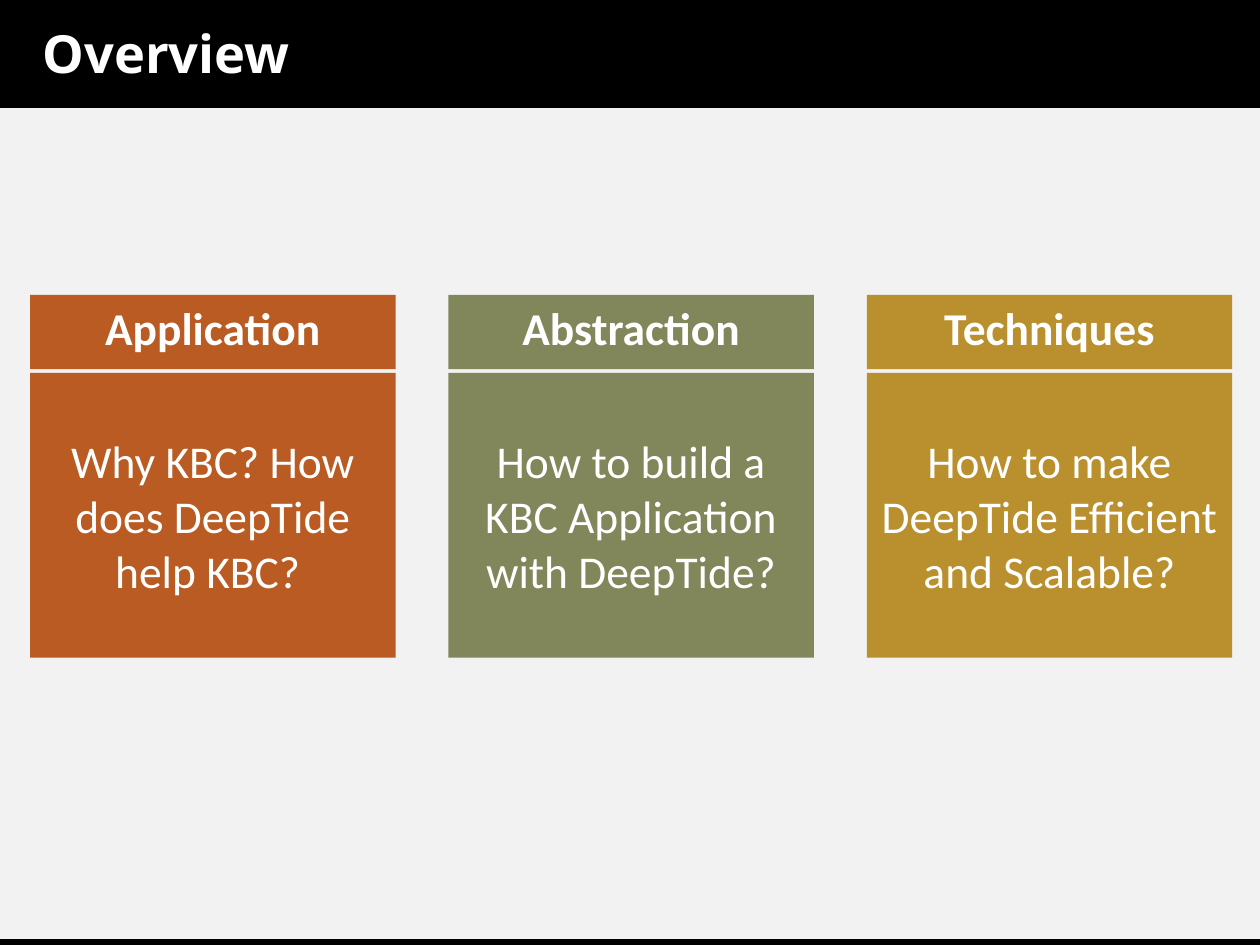
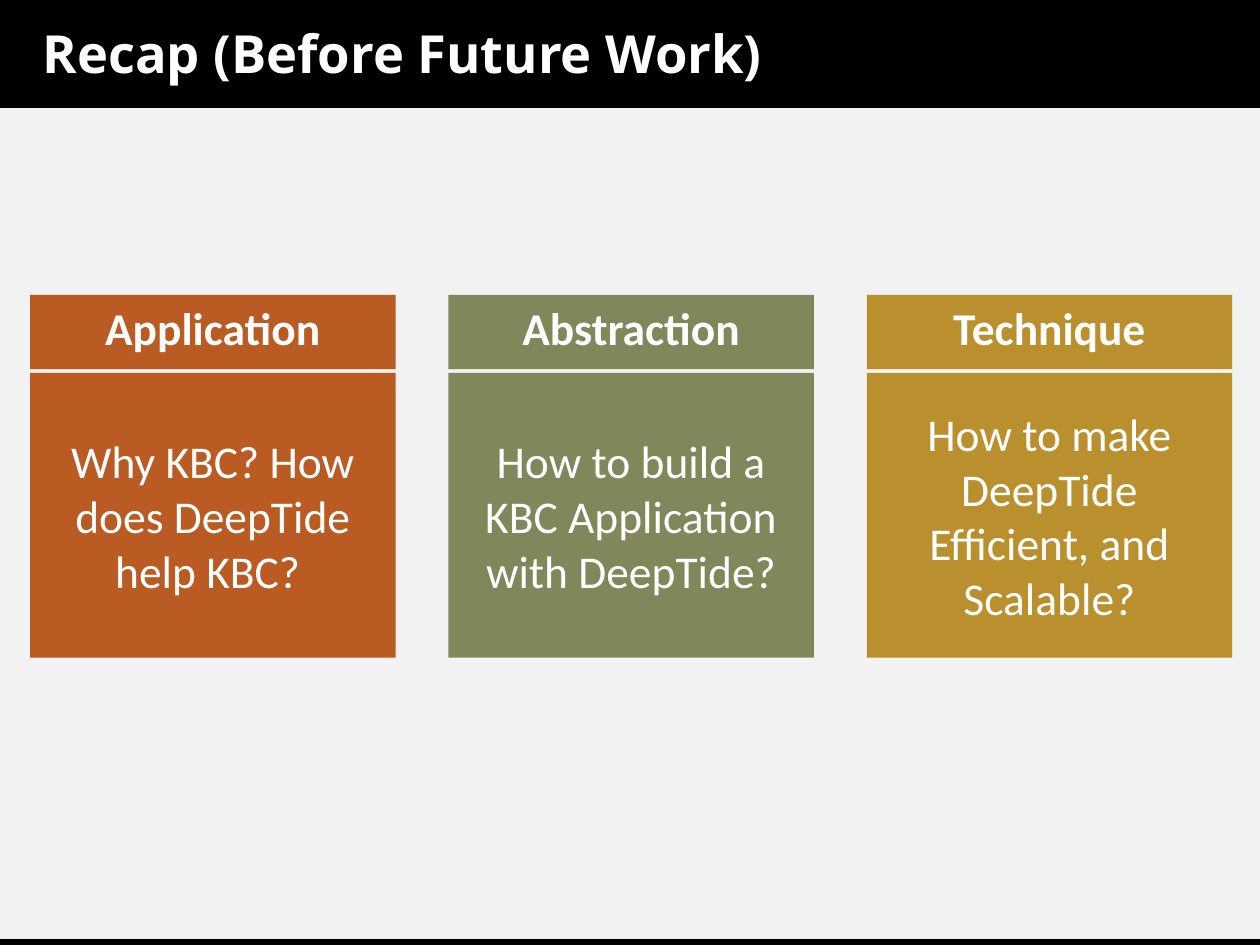
from dataclasses import dataclass

import pptx
import pptx.dml.color
import pptx.enum.shapes
import pptx.enum.text
import pptx.util

Inches = pptx.util.Inches
Anchor = pptx.enum.text.MSO_ANCHOR
Align = pptx.enum.text.PP_ALIGN

COLOURS = {
    "background": "F2F2F2",
    "band": "000000",
    "text": "FFFFFF",
    "application": "B95B22",
    "abstraction": "81875A",
    "technique": "BA8F2D",
}
TITLE_FONT, BODY_FONT = "Open Sans", "Calibri"
TITLE_SIZE, CARD_SIZE = 30, 26

# Grid, in inches
SLIDE_WIDTH, SLIDE_HEIGHT = 10, 7.5
MARGIN = 0.24
COLUMN_WIDTH, GUTTER = 2.9, 0.42
HEADING_TOP, HEADING_HEIGHT = 2.34, 0.59
QUESTION_TOP, QUESTION_HEIGHT = 2.96, 2.26
BAND_HEIGHT, FOOTER_HEIGHT = 0.85, 0.04


@dataclass(frozen=True)
class Box:
    left: float
    top: float
    width: float
    height: float

    def lengths(self) -> list[int]:
        return [Inches(n) for n in (self.left, self.top, self.width, self.height)]


@dataclass(frozen=True)
class Card:
    heading: str
    question: str
    colour: str


@dataclass(frozen=True)
class Page:
    title: str
    cards: tuple[Card, ...]


APPLICATION = Card("Application", "Why KBC? How does DeepTide help KBC? ", "application")
ABSTRACTION = Card("Abstraction", "How to build a KBC Application with DeepTide?", "abstraction")

PAGES = (
    Page("Overview", (
        APPLICATION,
        ABSTRACTION,
        Card("Techniques", "How to make DeepTide Efficient and Scalable?", "technique"),
    )),
    Page("Recap (Before Future Work)", (
        APPLICATION,
        ABSTRACTION,
        Card("Technique", "How to make DeepTide Efficient, and Scalable?", "technique"),
    )),
)


def rgb(name: str) -> pptx.dml.color.RGBColor:
    return pptx.dml.color.RGBColor.from_string(COLOURS[name])


def add_rectangle(slide, box: Box, colour: str, outlined: bool = False):
    shape = slide.shapes.add_shape(pptx.enum.shapes.MSO_SHAPE.RECTANGLE, *box.lengths())
    shape.shadow.inherit = False
    shape.fill.solid()
    shape.fill.fore_color.rgb = rgb(colour)
    if outlined:
        shape.line.color.rgb = rgb(colour)
        shape.line.width = pptx.util.Pt(0.75)
    else:
        shape.line.fill.background()
    return shape


def write(shape, text: str, font: str, size: float, bold: bool, align, spacing: float = 1.0) -> None:
    frame = shape.text_frame
    frame.word_wrap = True
    frame.vertical_anchor = Anchor.MIDDLE
    paragraph = frame.paragraphs[0]
    paragraph.alignment = align
    paragraph.line_spacing = spacing
    run = paragraph.add_run()
    run.text = text
    run.font.name = font
    run.font.size = pptx.util.Pt(size)
    run.font.bold = bold
    run.font.color.rgb = rgb("text")


def add_panel(slide, box: Box, colour: str, text: str, bold: bool, spacing: float) -> None:
    panel = add_rectangle(slide, box, colour)
    frame = panel.text_frame
    frame.margin_left = frame.margin_right = Inches(0.1)
    frame.margin_top = frame.margin_bottom = Inches(0.02)
    write(panel, text, BODY_FONT, CARD_SIZE, bold, Align.CENTER, spacing)


def add_frame(slide, title: str) -> None:
    # Bands at the top and bottom edges, then the title
    add_rectangle(slide, Box(0, 0, SLIDE_WIDTH, BAND_HEIGHT), "band", outlined=True)
    footer = Box(0, SLIDE_HEIGHT - FOOTER_HEIGHT, SLIDE_WIDTH, FOOTER_HEIGHT)
    add_rectangle(slide, footer, "band", outlined=True)
    title_box = slide.shapes.add_textbox(*Box(MARGIN, 0.02, 9, 0.8).lengths())
    write(title_box, title, TITLE_FONT, TITLE_SIZE, True, Align.LEFT)


def add_card(slide, column: int, card: Card) -> None:
    left = MARGIN + column * (COLUMN_WIDTH + GUTTER)
    heading = Box(left, HEADING_TOP, COLUMN_WIDTH, HEADING_HEIGHT)
    question = Box(left, QUESTION_TOP, COLUMN_WIDTH, QUESTION_HEIGHT)
    add_panel(slide, heading, card.colour, card.heading, bold=True, spacing=0.8)
    add_panel(slide, question, card.colour, card.question, bold=False, spacing=1.0)


def main() -> None:
    presentation = pptx.Presentation()
    presentation.slide_width = Inches(SLIDE_WIDTH)
    presentation.slide_height = Inches(SLIDE_HEIGHT)
    background = presentation.slide_master.background.fill
    background.solid()
    background.fore_color.rgb = rgb("background")

    for page in PAGES:
        slide = presentation.slides.add_slide(presentation.slide_layouts[6])
        add_frame(slide, page.title)
        for column, card in enumerate(page.cards):
            add_card(slide, column, card)

    presentation.save("out.pptx")


if __name__ == "__main__":
    main()
